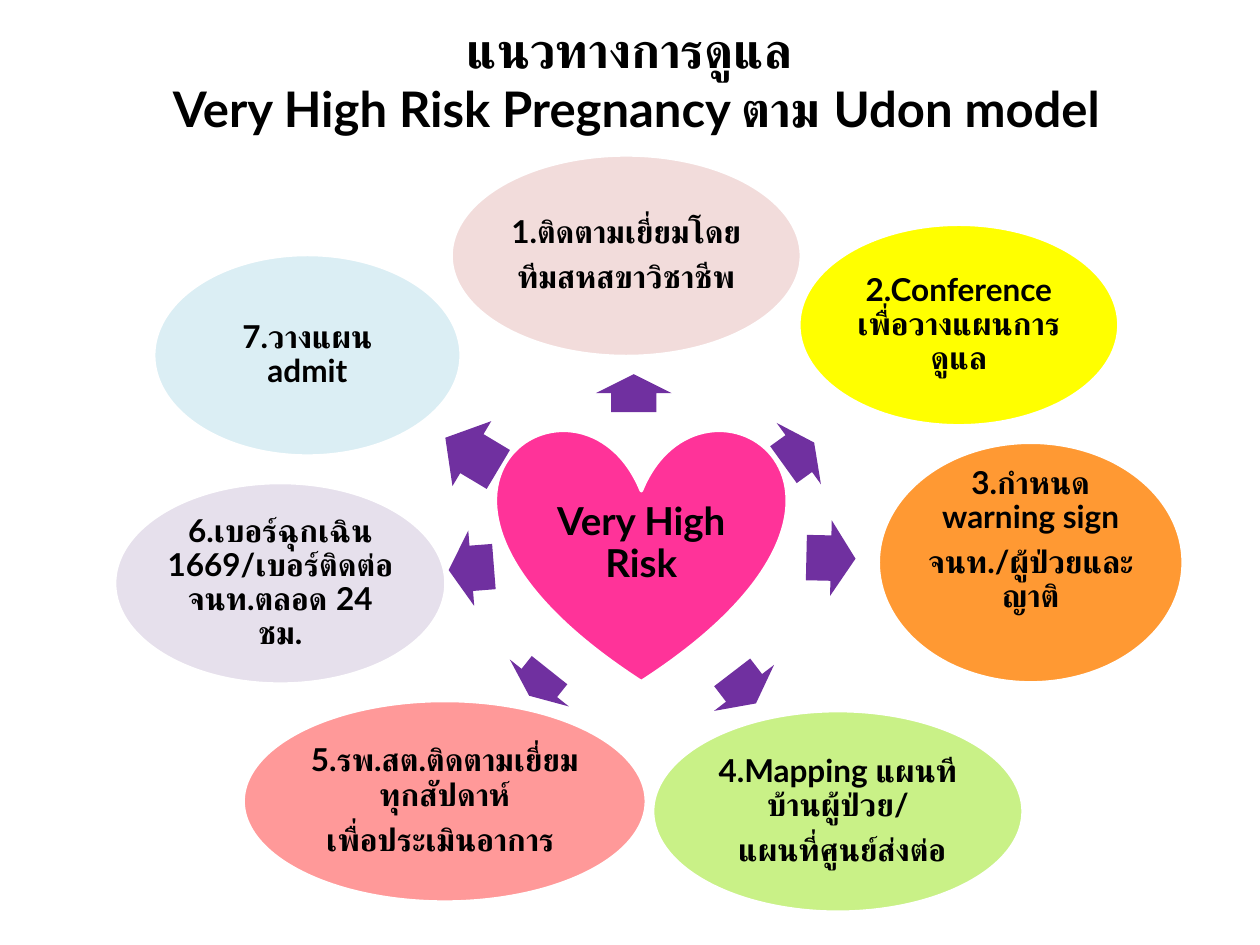
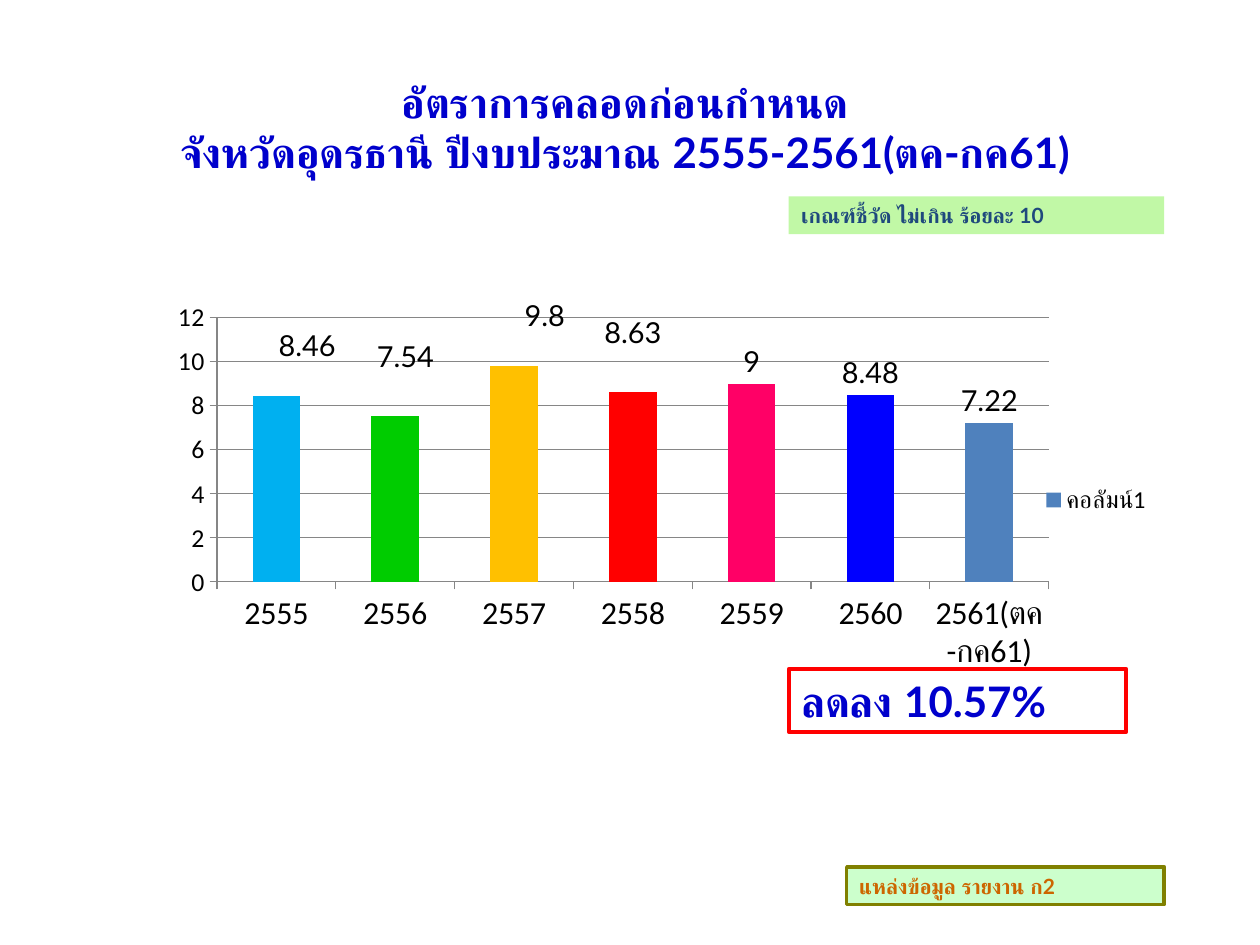
from dataclasses import dataclass
from typing import Any, NamedTuple, Optional

from lxml.etree import SubElement
from pptx import Presentation
from pptx.chart.chart import Chart
from pptx.chart.data import CategoryChartData
from pptx.dml.color import RGBColor
from pptx.enum.chart import XL_CHART_TYPE, XL_LABEL_POSITION, XL_LEGEND_POSITION, XL_TICK_MARK
from pptx.enum.shapes import MSO_SHAPE
from pptx.enum.text import MSO_ANCHOR, MSO_AUTO_SIZE, PP_ALIGN
from pptx.oxml.ns import qn
from pptx.shapes.autoshape import Shape
from pptx.slide import Slide
from pptx.text.text import TextFrame
from pptx.util import Emu, Pt

PX = 9144


@dataclass(frozen=True)
class Theme:
    font: str = "Lato"
    axis_font: str = "Calibri"
    black: str = "000000"
    white: str = "FFFFFF"
    heading_blue: str = "0000CC"
    heart_pink: str = "FF3399"
    arrow_purple: str = "7030A0"
    axis_gray: str = "868686"
    series_blue: str = "4F81BD"
    model_title: float = 28
    rate_title: float = 24
    heart: float = 22
    step: float = 18
    note: float = 12
    value_label: float = 16.5
    category_axis: float = 18.3
    value_axis: float = 14.7
    legend: float = 13.9


THEME = Theme()


class Box(NamedTuple):
    left: int
    top: int
    width: int
    height: int


class Step(NamedTuple):
    box: Box
    fill: str
    lines: tuple[str, ...]
    bottom_inset: int = 3


class Arrow(NamedTuple):
    box: Box
    rotation: float


class Note(NamedTuple):
    box: Box
    text: str
    size: float
    color: str
    fill: Optional[str] = None
    line: Optional[str] = None
    line_width: float = 0


class Rate(NamedTuple):
    year: str
    value: float
    color: Optional[str] = None
    label_shift: Optional[tuple[float, float]] = None


HEART = Step(Box(394, 339, 230, 202), THEME.heart_pink, ("Very High Risk",))

STEPS = (
    Step(Box(358, 123, 278, 160), "F2DCDB", ("1.ติดตามเยี่ยมโดย", "ทีมสหสขาวิชาชีพ")),
    Step(Box(634, 178, 254, 160), "FFFF00", ("2.Conference เพื่อวางแผนการดูแล",)),
    Step(Box(697, 351, 242, 191), "FF9933",
         ("3.กำหนด warning sign", "จนท./ผู้ป่วยและญาติ"), 38),
    Step(Box(518, 564, 294, 160), "C9F187",
         ("4.Mapping แผนทีบ้านผู้ป่วย/", " แผนที่ศูนย์ส่งต่อ")),
    Step(Box(193, 556, 320, 160), "FF9999",
         ("5.รพ.สต.ติดตามเยี่ยมทุกสัปดาห์", "เพื่อประเมินอาการ ")),
    Step(Box(91, 383, 263, 160), "E6E0EC",
         ("6.เบอร์ฉุกเฉิน 1669/เบอร์ติดต่อจนท.ตลอด 24 ชม.",)),
    Step(Box(122, 202, 244, 160), "DBEEF4", ("7.วางแผน admit",)),
)

ARROWS = (
    Arrow(Box(488, 282, 30, 60), 270),
    Arrow(Box(619, 330, 30, 60), 324.2),
    Arrow(Box(640, 413, 39, 60), 1.3),
    Arrow(Box(575, 516, 31, 60), 52.5),
    Arrow(Box(415, 512, 26, 60), 128.5),
    Arrow(Box(356, 421, 36, 60), 175.5),
    Arrow(Box(350, 330, 49, 60), 210.9),
)

RATES = (
    Rate("2555", 8.46, "00B0F0", (0.03, -0.06)),
    Rate("2556", 7.54, "00CC00", (0.01, -0.08)),
    Rate("2557", 9.8, "FFC000", (0.03, -0.06)),
    Rate("2558", 8.63, "FF0000", (0, -0.08)),
    Rate("2559", 9, "FF0066"),
    Rate("2560", 8.48, "0000FF"),
    Rate("2561(ตค-กค61)", 7.22),
)

NOTES = (
    Note(Box(672, 688, 252, 30), "แหล่งข้อมูล รายงาน ก2", THEME.note,
         "CC6600", "CCFFCC", "808000", 2),
    Note(Box(626, 156, 298, 30), "เกณฑ์ชี้วัด ไม่เกิน ร้อยละ 10", THEME.note,
         "1F497D", "C1F8A6"),
    Note(Box(626, 531, 268, 50), "ลดลง 10.57%", THEME.rate_title,
         THEME.heading_blue, None, "FF0000", 2.25),
)


def apply_format(target: Any, values: dict[str, Any]) -> None:
    for name, value in values.items():
        setattr(target, name, value)


def to_emu(box: Box) -> tuple[Emu, ...]:
    return tuple(Emu(length * PX) for length in box)


def format_font(font: Any, size: float, color: str = THEME.black,
                name: str = THEME.font, bold: bool = False) -> None:
    apply_format(font, {"name": name, "size": Pt(size), "bold": bold})
    font.color.rgb = RGBColor.from_string(color)


def write_lines(frame: TextFrame, lines: tuple[str, ...], size: float, color: str,
                paragraph_format: dict[str, Any]) -> None:
    apply_format(frame, {"word_wrap": True, "auto_size": MSO_AUTO_SIZE.NONE,
                         "vertical_anchor": MSO_ANCHOR.MIDDLE})
    for index, line in enumerate(lines):
        paragraph = frame.add_paragraph() if index else frame.paragraphs[0]
        apply_format(paragraph, paragraph_format)
        run = paragraph.add_run()
        run.text = line
        format_font(run.font, size, color, bold=True)


def add_title_slide(presentation: Any, box: Box, lines: tuple[str, ...],
                    size: float, color: str) -> Slide:
    slide = presentation.slides.add_slide(presentation.slide_layouts[5])
    title = slide.shapes.title
    apply_format(title, dict(zip(("left", "top", "width", "height"), to_emu(box))))
    write_lines(title.text_frame, lines, size, color, {"alignment": PP_ALIGN.CENTER})
    return slide


def add_preset(slide: Slide, preset: MSO_SHAPE, box: Box, fill: Optional[str],
               line: Optional[str] = None, line_width: float = 0) -> Shape:
    shape = slide.shapes.add_shape(preset, *to_emu(box))
    shape.shadow.inherit = False
    for paint, color in ((shape.fill, fill), (shape.line.fill, line)):
        if color:
            paint.solid()
            paint.fore_color.rgb = RGBColor.from_string(color)
        else:
            paint.background()
    if line:
        shape.line.width = Pt(line_width)
    return shape


def add_step(slide: Slide, preset: MSO_SHAPE, step: Step, size: float) -> None:
    shape = add_preset(slide, preset, step.box, step.fill, THEME.white, 2)
    frame = shape.text_frame
    inset = Emu(3 * PX)
    apply_format(frame, {"margin_left": inset, "margin_right": inset, "margin_top": inset,
                         "margin_bottom": Emu(step.bottom_inset * PX)})
    write_lines(frame, step.lines, size, THEME.black,
                {"alignment": PP_ALIGN.CENTER, "line_spacing": 0.9,
                 "space_after": Pt(0.35 * size)})


def add_arrow(slide: Slide, arrow: Arrow) -> None:
    shape = add_preset(slide, MSO_SHAPE.RIGHT_ARROW, arrow.box, THEME.arrow_purple)
    shape.rotation = arrow.rotation
    shape.adjustments[0] = 0.6
    shape.adjustments[1] = 0.5


def add_note(slide: Slide, note: Note) -> None:
    shape = add_preset(slide, MSO_SHAPE.RECTANGLE, note.box, note.fill,
                       note.line, note.line_width)
    write_lines(shape.text_frame, (note.text,), note.size, note.color,
                {"alignment": PP_ALIGN.LEFT})


def set_layout(parent: Any, index: int, values: dict[str, Any]) -> None:
    for stale in parent.findall(qn("c:layout")):
        parent.remove(stale)
    layout = SubElement(parent, qn("c:layout"))
    manual = SubElement(layout, qn("c:manualLayout"))
    for name, value in values.items():
        SubElement(manual, qn(f"c:{name}")).set("val", str(value))
    parent.insert(index, layout)


def format_axes(chart: Chart) -> None:
    apply_format(chart.value_axis, {"minimum_scale": 0, "maximum_scale": 12, "major_unit": 2,
                                    "has_major_gridlines": True})
    for axis, size in ((chart.category_axis, THEME.category_axis),
                       (chart.value_axis, THEME.value_axis)):
        apply_format(axis, {"major_tick_mark": XL_TICK_MARK.OUTSIDE,
                            "minor_tick_mark": XL_TICK_MARK.NONE})
        format_font(axis.tick_labels.font, size, name=THEME.axis_font)
        axis.format.line.color.rgb = RGBColor.from_string(THEME.axis_gray)
        for body in axis._element.iter(qn("a:bodyPr")):
            body.set("rot", "0")
            body.set("vert", "horz")
    gridline = chart.value_axis.major_gridlines.format.line
    gridline.color.rgb = RGBColor.from_string(THEME.axis_gray)


def format_series(series: Any) -> None:
    series.format.fill.solid()
    series.format.fill.fore_color.rgb = RGBColor.from_string(THEME.series_blue)
    labels = series.data_labels
    apply_format(labels, {"show_value": True, "position": XL_LABEL_POSITION.OUTSIDE_END})
    format_font(labels.font, THEME.value_label)
    for index, rate in enumerate(RATES):
        point = series.points[index]
        if rate.color:
            point.format.fill.solid()
            point.format.fill.fore_color.rgb = RGBColor.from_string(rate.color)
        if rate.label_shift:
            point.data_label.position = XL_LABEL_POSITION.OUTSIDE_END
            format_font(point.data_label.font, THEME.value_label)
    shifts = [rate.label_shift for rate in RATES if rate.label_shift]
    for label, shift in zip(series._element.iter(qn("c:dLbl")), shifts):
        set_layout(label, 1, dict(zip("xy", shift)))
    for leader in series._element.iter(qn("c:showLeaderLines")):
        leader.set("val", "0")


def add_rate_chart(slide: Slide, box: Box) -> None:
    data = CategoryChartData()
    data.categories = [rate.year for rate in RATES]
    data.add_series("คอลัมน์1", [rate.value for rate in RATES])
    chart = slide.shapes.add_chart(XL_CHART_TYPE.COLUMN_CLUSTERED, *to_emu(box), data).chart
    apply_format(chart, {"has_title": False, "has_legend": True})
    format_font(chart.font, THEME.value_label)
    apply_format(chart.legend, {"position": XL_LEGEND_POSITION.RIGHT,
                                "include_in_layout": False})
    format_font(chart.legend.font, THEME.legend, name=THEME.axis_font)
    plot = chart.plots[0]
    apply_format(plot, {"gap_width": 150, "vary_by_categories": False})
    format_axes(chart)
    format_series(plot.series[0])
    edges = {"xMode": "edge", "yMode": "edge"}
    set_layout(chart.legend._element, 1, {**edges, "x": 0.88, "y": 0.44})
    set_layout(plot._element.getparent(), 0,
               {"layoutTarget": "inner", **edges, "x": 0.08, "y": 0.09, "w": 0.81, "h": 0.57})


def build_model_slide(presentation: Any) -> None:
    slide = add_title_slide(presentation, Box(55, 0, 900, 125),
                            ("แนวทางการดูแล ", "Very High Risk Pregnancy ตาม Udon model"),
                            THEME.model_title, THEME.black)
    add_step(slide, MSO_SHAPE.HEART, HEART, THEME.heart)
    for arrow, step in zip(ARROWS, STEPS):
        add_arrow(slide, arrow)
        add_step(slide, MSO_SHAPE.OVAL, step, THEME.step)


def build_rate_slide(presentation: Any) -> None:
    slide = add_title_slide(presentation, Box(23, 55, 946, 91),
                            ("อัตราการคลอดก่อนกำหนด",
                             "จังหวัดอุดรธานี ปีงบประมาณ 2555-2561(ตค-กค61)"),
                            THEME.rate_title, THEME.heading_blue)
    add_rate_chart(slide, Box(107, 219, 815, 368))
    for note in NOTES:
        add_note(slide, note)


def main() -> None:
    presentation = Presentation()
    apply_format(presentation, {"slide_width": Emu(1000 * PX), "slide_height": Emu(750 * PX)})
    build_model_slide(presentation)
    build_rate_slide(presentation)
    presentation.save("out.pptx")


if __name__ == "__main__":
    main()
